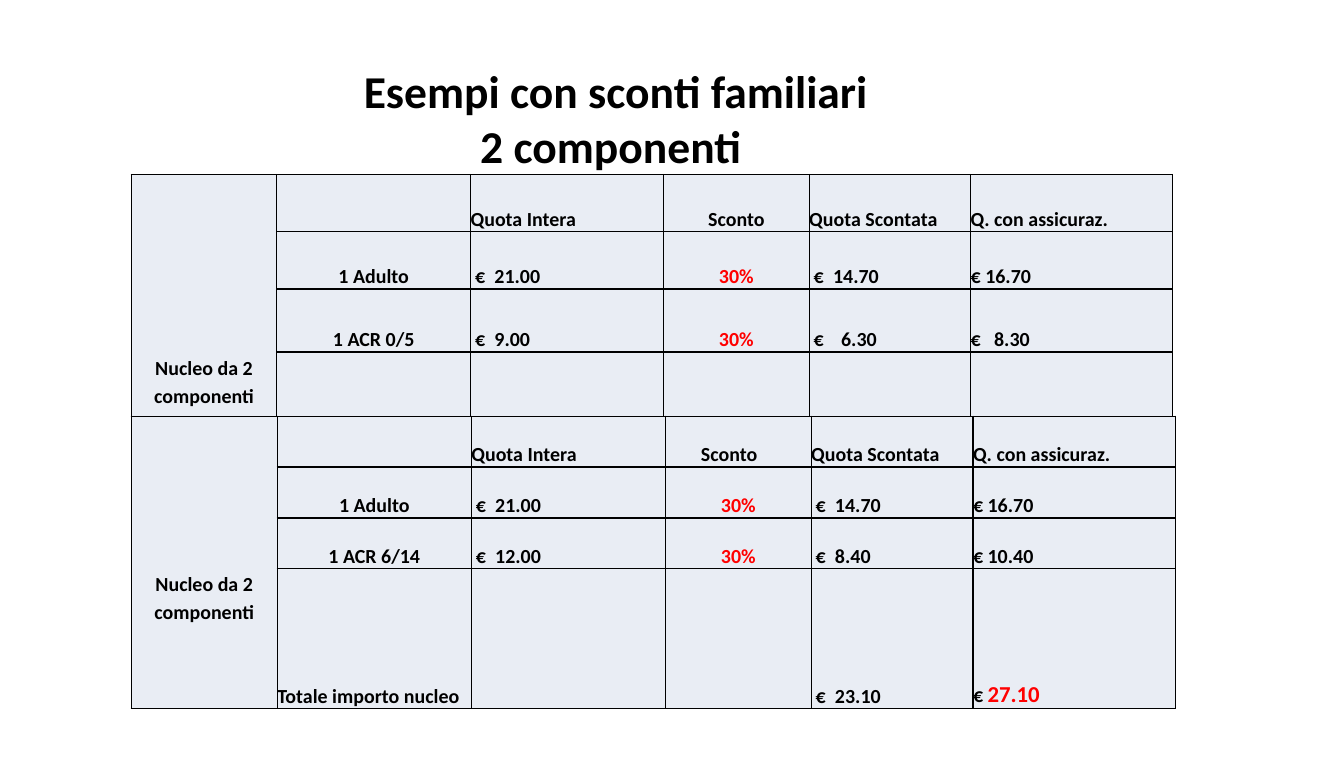
import pptx
import pptx.util
import pptx.dml.color
import pptx.enum.text
import pptx.oxml.ns
from lxml import etree

Cm, Pt = pptx.util.Cm, pptx.util.Pt
ALIGN = pptx.enum.text.PP_ALIGN
ANCHOR = pptx.enum.text.MSO_ANCHOR
qn = pptx.oxml.ns.qn

COLORS = {"text": "000000", "accent": "FF0000", "cell": "E9EDF4", "border": "000000"}
HEADERS = ["", "Quota Intera", "Sconto", "Quota Scontata", "Q. con assicuraz."]
ADULT = ["1 Adulto", "€\t21.00", "30%", "€\t14.70", "€ 16.70"]
LABEL = "Nucleo da 2 componenti"
CENTERED = (1, 3)
AMOUNT_COLUMNS = (2, 4)
AMOUNT_INSET = 0.11
AMOUNT_TAB = 0.48


def add_run(p, text, size=14, color="text"):
    """Add one bold Calibri run to a paragraph."""
    r = p.add_run()
    r.text = text
    r.font.name = "Calibri"
    r.font.size = Pt(size)
    r.font.bold = True
    r.font.color.rgb = pptx.dml.color.RGBColor.from_string(COLORS[color])


def add_title(s, left, top, width, height, lines):
    """Place the title placeholder in its box and fill its lines."""
    sp = s.shapes.title
    sp.left, sp.top, sp.width, sp.height = Cm(left), Cm(top), Cm(width), Cm(height)
    tf = sp.text_frame
    tf.word_wrap = True
    tf.auto_size = pptx.enum.text.MSO_AUTO_SIZE.NONE
    tf.vertical_anchor = ANCHOR.MIDDLE
    p = tf.paragraphs[0]
    p.alignment = ALIGN.CENTER
    for i, line in enumerate(lines):
        if i:
            p.add_line_break()
        add_run(p, line, 32)


def style_cell(cell):
    """Give a cell its borders, fill, insets and anchor."""
    tcPr = cell._tc.get_or_add_tcPr()
    for side in ("lnL", "lnR", "lnT", "lnB"):
        ln = etree.SubElement(tcPr, qn("a:" + side), w=str(Pt(1)))
        fill = etree.SubElement(ln, qn("a:solidFill"))
        etree.SubElement(fill, qn("a:srgbClr"), val=COLORS["border"])
    cell.fill.solid()
    cell.fill.fore_color.rgb = pptx.dml.color.RGBColor.from_string(COLORS["cell"])
    cell.margin_left = cell.margin_right = cell.margin_top = cell.margin_bottom = 0
    cell.vertical_anchor = ANCHOR.BOTTOM


def write_cell(cell, runs, align=ALIGN.LEFT, inset=0.0, tab=None):
    """Write runs into a cell, with an optional tab stop for the amount."""
    cell.margin_left = Cm(inset)
    p = cell.text_frame.paragraphs[0]
    p.alignment = align
    p.line_spacing = 1.15
    if tab:
        tabs = etree.SubElement(p._p.get_or_add_pPr(), qn("a:tabLst"))
        etree.SubElement(tabs, qn("a:tab"), pos=str(Cm(tab)), algn="l")
    for run in runs:
        add_run(p, *run)


def add_quota_table(s, left, top, widths, heights, rows, label_bottom, tabs, sconto_inset):
    """Build the quota table of one family, with a merged label column."""
    tbl = s.shapes.add_table(len(heights), len(widths), Cm(left), Cm(top),
                             Cm(sum(widths)), Cm(sum(heights))).table
    tbl.first_row = tbl.horz_banding = False
    for column, width in zip(tbl.columns, widths):
        column.width = Cm(width)
    for row, height in zip(tbl.rows, heights):
        row.height = Cm(height)
    for cell in tbl.iter_cells():
        style_cell(cell)

    label = tbl.cell(0, 0)
    label.merge(tbl.cell(len(heights) - 1, 0))
    write_cell(label, [(LABEL,)], ALIGN.CENTER)
    label.margin_bottom = Cm(label_bottom)

    for i, texts in enumerate([HEADERS] + rows):
        for j, text in enumerate(texts, 1):
            if not text:
                continue
            inset = AMOUNT_INSET if i and j in AMOUNT_COLUMNS else 0
            align = ALIGN.CENTER if j in CENTERED else ALIGN.LEFT
            if text == "Sconto" and sconto_inset:
                inset, align = sconto_inset, ALIGN.LEFT
            tab = tabs.get(text, AMOUNT_TAB) if "\t" in text else None
            color = "accent" if text.endswith("%") else "text"
            write_cell(tbl.cell(i, j), [(text, 14, color)], align, inset, tab)
    return tbl


def add_total(tbl, reduced, insured):
    """Fill the last row with the family total."""
    last = len(tbl.rows) - 1
    write_cell(tbl.cell(last, 1), [("Totale importo nucleo",)])
    write_cell(tbl.cell(last, 4), [(reduced,)], ALIGN.LEFT, AMOUNT_INSET, AMOUNT_TAB)
    write_cell(tbl.cell(last, 5), [("€ ",), (insured, 16, "accent")])


def main():
    """Build the slide and save it."""
    prs = pptx.Presentation()
    prs.slide_width, prs.slide_height = Cm(33.3), Cm(19.05)
    s = prs.slides.add_slide(prs.slide_layouts[5])
    add_title(s, 0.86, 1.72, 28.8, 2.39, ["Esempi con sconti familiari", "2 componenti "])
    add_quota_table(
        s, 3.25, 4.32, [3.61, 4.8, 4.78, 3.61, 4, 5], [1.42, 1.42, 1.56, 1.59],
        [ADULT, ["1 ACR 0/5", "€\t9.00", "30%", "€\t6.30", "€\t8.30"]],
        0.18, {"€\t6.30": 0.68, "€\t8.30": 0.58}, 0)
    tbl = add_quota_table(
        s, 3.25, 10.31, [3.62, 4.81, 4.81, 3.61, 4.01, 5.02], [1.26, 1.26, 1.26, 1.04],
        [ADULT, ["1 ACR 6/14", "€\t12.00", "30%", "€\t8.40", "€ 10.40"]],
        2.08, {}, 0.88)
    add_total(tbl, "€\t23.10", "27.10")
    prs.save("out.pptx")


if __name__ == "__main__":
    main()
